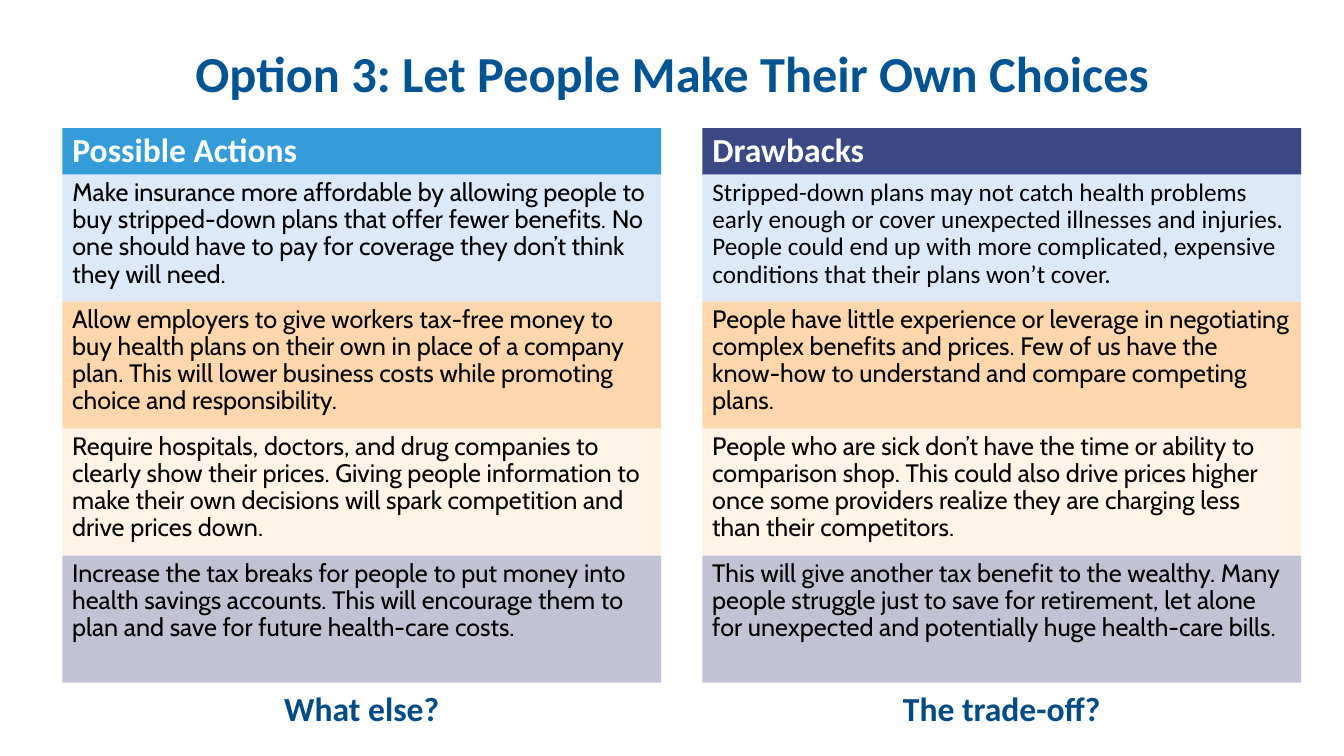
import pptx
import pptx.util
import pptx.dml.color
import pptx.enum.shapes
import pptx.enum.text
import pptx.oxml.ns
from lxml import etree

Cm = pptx.util.Cm
Align = pptx.enum.text.PP_ALIGN
Anchor = pptx.enum.text.MSO_ANCHOR

theme = {
    "heading_font": "Calibri", "body_font": "Cabin",
    "title_size": 36, "heading_size": 24, "body_size": 18,
    "title": "005493", "question": "004A85", "light": "FFFFFF", "dark": "000000",
    "actions": "359CDA", "drawbacks": "273777",
    "rows": ["DCE9F8", "FFD7AC", "FFF4E6", "C3C2D4"],
}


def place(panel, left, top, width, height, fill=None):
    panel.left, panel.top, panel.width, panel.height = Cm(left), Cm(top), Cm(width), Cm(height)
    if fill:
        panel.fill.solid()
        panel.fill.fore_color.rgb = pptx.dml.color.RGBColor.from_string(fill)
        panel.line.fill.background()
        panel.shadow.inherit = False


def write(panel, text, font, size, color, bold=False, align=Align.LEFT,
          anchor=Anchor.TOP, spacing=0.9, before=10):
    frame = panel.text_frame
    frame.word_wrap = True
    frame.auto_size = pptx.enum.text.MSO_AUTO_SIZE.NONE
    frame.vertical_anchor = anchor
    paragraph = frame.paragraphs[0]
    paragraph.alignment = align
    paragraph.line_spacing = spacing
    paragraph.space_before = pptx.util.Pt(before)
    properties = paragraph._p.get_or_add_pPr()
    properties.set("marL", "0")
    properties.set("indent", "0")
    etree.SubElement(properties, pptx.oxml.ns.qn("a:buNone"))
    run = paragraph.add_run()
    run.text = text
    run.font.name = font
    run.font.size = pptx.util.Pt(size)
    run.font.bold = bold
    run.font.color.rgb = pptx.dml.color.RGBColor.from_string(color)


columns = [
    ("Possible Actions", theme["actions"], "What else?", theme["body_font"], [
        "Make insurance more affordable by allowing people to buy stripped-down plans that offer fewer benefits. No one should have to pay for coverage they don’t think they will need.",
        "Allow employers to give workers tax-free money to buy health plans on their own in place of a company plan. This will lower business costs while promoting choice and responsibility.",
        "Require hospitals, doctors, and drug companies to clearly show their prices. Giving people information to make their own decisions will spark competition and drive prices down.",
        "Increase the tax breaks for people to put money into health savings accounts. This will encourage them to plan and save for future health-care costs.",
    ]),
    ("Drawbacks", theme["drawbacks"], "The trade-off?", theme["heading_font"], [
        "Stripped-down plans may not catch health problems early enough or cover unexpected illnesses and injuries. People could end up with more complicated, expensive conditions that their plans won’t cover.",
        "People have little experience or leverage in negotiating complex benefits and prices. Few of us have the know-how to understand and compare competing plans.",
        "People who are sick don’t have the time or ability to comparison shop. This could also drive prices higher once some providers realize they are charging less than their competitors.",
        "This will give another tax benefit to the wealthy. Many people struggle just to save for retirement, let alone for unexpected and potentially huge health-care bills.",
    ]),
]

deck = pptx.Presentation()
deck.slide_width, deck.slide_height = Cm(33.87), Cm(19.05)
slide = deck.slides.add_slide(deck.slide_layouts[4])

title = slide.shapes.title
place(title, 2.34, 1.02, 29.21, 1.78)
write(title, "Option 3: Let People Make Their Own Choices", theme["heading_font"],
      theme["title_size"], theme["title"], True, Align.CENTER, Anchor.MIDDLE, before=0)

first_left, column_step, column_width = 1.57, 16.13, 15.09
heading_top, heading_height, row_height = 3.23, 1.17, 3.2
rows_top = heading_top + heading_height

for column, (heading_text, heading_fill, question_text, first_font, entries) in enumerate(columns):
    left = first_left + column * column_step
    heading = slide.placeholders[1 + 2 * column]
    place(heading, left, heading_top, column_width, heading_height, heading_fill)
    write(heading, heading_text, theme["heading_font"], theme["heading_size"],
          theme["light"], True, anchor=Anchor.BOTTOM)
    if heading_fill == theme["drawbacks"]:
        tint = heading._element.spPr.find(".//" + pptx.oxml.ns.qn("a:srgbClr"))
        etree.SubElement(tint, pptx.oxml.ns.qn("a:alpha"), val="91000")

    for row, (entry_text, row_fill) in enumerate(zip(entries, theme["rows"])):
        if row == 0:
            entry = slide.placeholders[2 + 2 * column]
        else:
            entry = slide.shapes.add_shape(pptx.enum.shapes.MSO_SHAPE.RECTANGLE, 0, 0, 0, 0)
        place(entry, left, rows_top + row * row_height, column_width, row_height, row_fill)
        write(entry, entry_text, first_font if row == 0 else theme["body_font"],
              theme["body_size"], theme["dark"])

    question = slide.shapes.add_textbox(0, 0, 0, 0)
    place(question, left, rows_top + len(entries) * row_height, column_width, 1.28)
    write(question, question_text, theme["heading_font"], theme["heading_size"],
          theme["question"], True, Align.CENTER, spacing=1.0, before=0)

deck.save("out.pptx")
